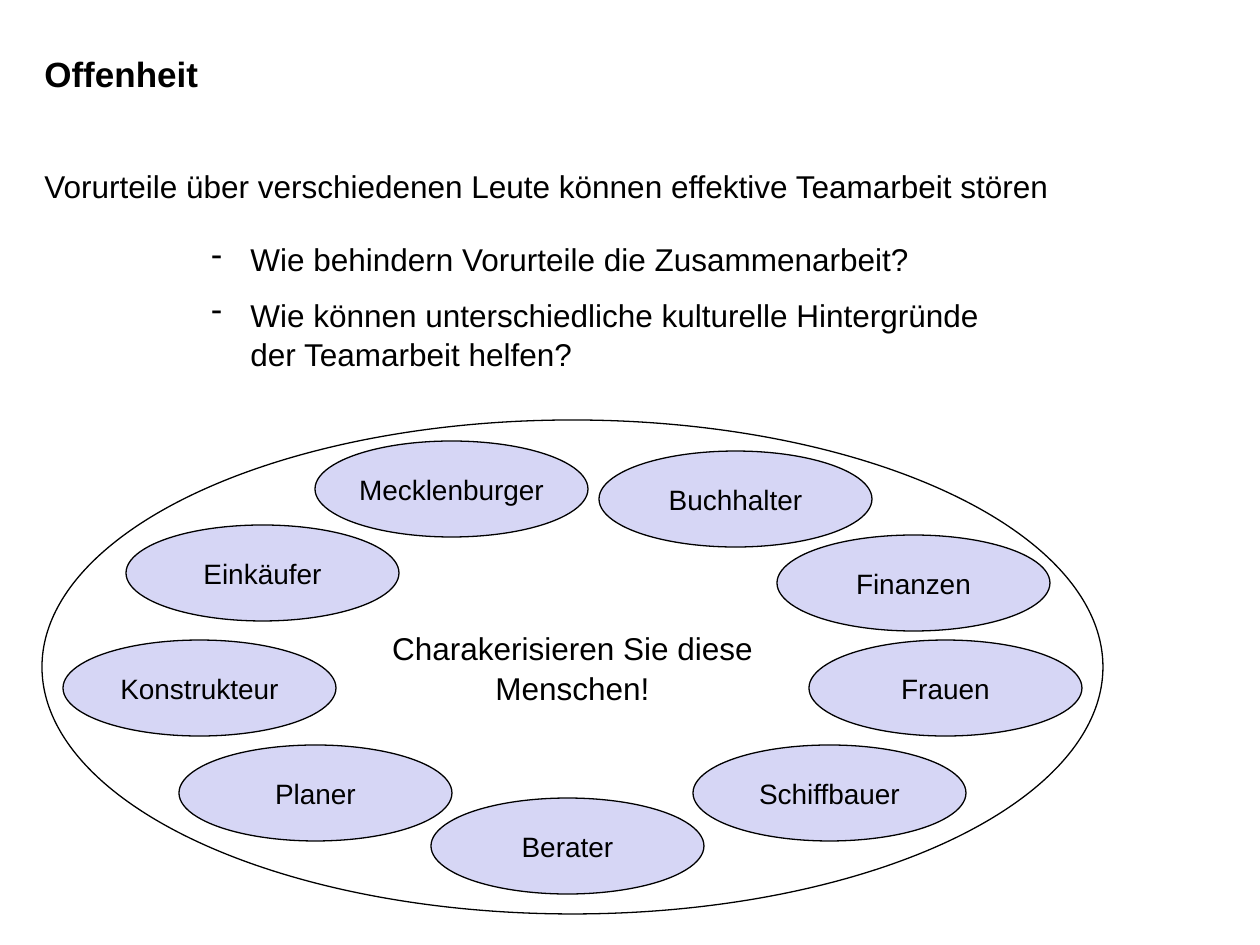
from typing import NamedTuple

from lxml.etree import SubElement
from pptx import Presentation
from pptx.dml.color import RGBColor
from pptx.enum.shapes import MSO_SHAPE
from pptx.enum.text import MSO_ANCHOR, PP_ALIGN
from pptx.oxml.ns import qn
from pptx.util import Emu, Pt

PIXELS_PER_INCH = 126
BLACK = "000000"
WHITE = "FFFFFF"
LAVENDER = "D6D6F5"
ROLE_WIDTH, ROLE_HEIGHT = 273, 96
DASH_INDENT = 39


class Box(NamedTuple):
    left: int
    top: int
    width: int
    height: int


class Role(NamedTuple):
    name: str
    left: int
    top: int


ROLES = [
    Role("Einkäufer", 126, 525),
    Role("Konstrukteur", 63, 640),
    Role("Mecklenburger", 315, 441),
    Role("Planer", 179, 745),
    Role("Buchhalter", 599, 451),
    Role("Berater", 431, 798),
    Role("Schiffbauer", 693, 745),
    Role("Frauen", 809, 640),
    Role("Finanzen", 777, 535),
]
QUESTIONS = [
    "Wie behindern Vorurteile die Zusammenarbeit?",
    "Wie können unterschiedliche kulturelle Hintergründe der Teamarbeit helfen?",
]


def px(value: int) -> Emu:
    return Emu(round(value * 914400 / PIXELS_PER_INCH))


def color(value: str) -> RGBColor:
    return RGBColor.from_string(value)


def add_dash(paragraph) -> None:
    properties = paragraph._p.get_or_add_pPr()
    properties.set("marL", str(px(DASH_INDENT)))
    properties.set("indent", str(-px(DASH_INDENT)))
    SubElement(properties, qn("a:buChar")).set("char", "-")


def write(frame, lines: list[str], size: int, bold: bool = False,
          align: PP_ALIGN = PP_ALIGN.LEFT, gap: int = 0, dashes: bool = False) -> None:
    for index, line in enumerate(lines):
        paragraph = frame.add_paragraph() if index else frame.paragraphs[0]
        paragraph.text = line
        if dashes:
            add_dash(paragraph)
        paragraph.alignment = align
        paragraph.line_spacing = 1.05
        if index and gap:
            paragraph.space_before = Pt(gap)
        paragraph.font.name = "Arial"
        paragraph.font.size = Pt(size)
        paragraph.font.bold = bold
        paragraph.font.color.rgb = color(BLACK)


def add_text(slide, box: Box, lines: list[str], size: int, **style) -> None:
    frame = slide.shapes.add_textbox(*map(px, box)).text_frame
    frame.word_wrap = True
    write(frame, lines, size, **style)


def add_ellipse(slide, box: Box, fill: str, lines: list[str], size: int) -> None:
    shape = slide.shapes.add_shape(MSO_SHAPE.OVAL, *map(px, box))
    shape.shadow.inherit = False
    shape.fill.solid()
    shape.fill.fore_color.rgb = color(fill)
    shape.line.color.rgb = color(BLACK)
    shape.line.width = Pt(0.75)
    shape.text_frame.word_wrap = False
    shape.text_frame.vertical_anchor = MSO_ANCHOR.MIDDLE
    write(shape.text_frame, lines, size, align=PP_ALIGN.CENTER)


def main() -> None:
    presentation = Presentation()
    presentation.slide_width = px(1260)
    presentation.slide_height = px(945)
    slide = presentation.slides.add_slide(presentation.slide_layouts[6])

    add_text(slide, Box(32, 44, 1071, 53), ["Offenheit"], 20, bold=True)
    add_text(slide, Box(32, 159, 1176, 164),
             ["Vorurteile über verschiedenen Leute können effektive Teamarbeit stören"], 18)
    add_ellipse(slide, Box(42, 420, 1061, 494), WHITE,
                ["Charakerisieren Sie diese", "Menschen!"], 18)
    for role in ROLES:
        add_ellipse(slide, Box(role.left, role.top, ROLE_WIDTH, ROLE_HEIGHT),
                    LAVENDER, [role.name], 16)
    add_text(slide, Box(199, 232, 840, 145), QUESTIONS, 18, gap=9, dashes=True)

    presentation.save("out.pptx")


if __name__ == "__main__":
    main()
